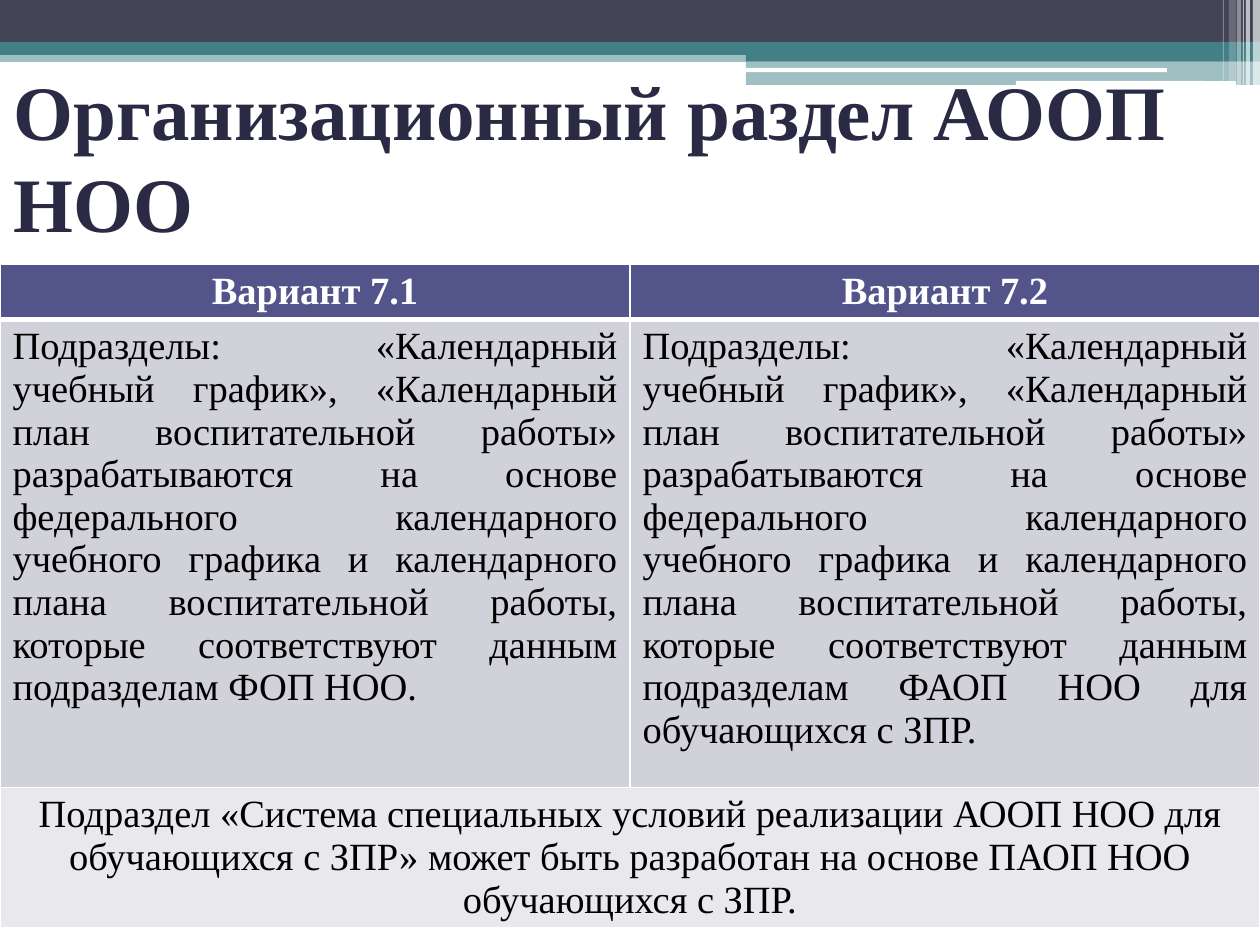
from lxml import etree
from pptx import Presentation
from pptx.dml.color import RGBColor
from pptx.enum.shapes import MSO_SHAPE
from pptx.enum.text import MSO_ANCHOR, MSO_AUTO_SIZE, PP_ALIGN
from pptx.oxml.ns import qn
from pptx.util import Pt

PX = 914400 // 126
WIDE, HIGH = 1260, 945
FONT = "Times New Roman"

SLATE = RGBColor(0x42, 0x44, 0x56)
TEAL = RGBColor(0x43, 0x80, 0x86)
WHITE = RGBColor(0xFF, 0xFF, 0xFF)
BLACK = RGBColor(0, 0, 0)
NAVY = RGBColor(0x2A, 0x2A, 0x45)
VIOLET = RGBColor(0x53, 0x54, 0x8A)
GREY = RGBColor(0xD1, 0xD1, 0xDA)
PALE = RGBColor(0xE9, 0xE9, 0xED)

RECT, ROUND = MSO_SHAPE.RECTANGLE, MSO_SHAPE.ROUNDED_RECTANGLE
LEFT, CENTER, JUST = PP_ALIGN.LEFT, PP_ALIGN.CENTER, PP_ALIGN.JUSTIFY
MIDDLE, NO_FIT = MSO_ANCHOR.MIDDLE, MSO_AUTO_SIZE.NONE

TITLE = "Организационный раздел АООП НОО"
HEADS = ["Вариант 7.1", "Вариант 7.2"]
BODY = (
    "Подразделы: «Календарный учебный график», «Календарный план "
    "воспитательной работы» разрабатываются на основе федерального "
    "календарного учебного графика и календарного плана воспитательной "
    "работы, которые соответствуют данным подразделам "
)
ENDS = ["ФОП НОО.", "ФАОП НОО для обучающихся с ЗПР."]
NOTE = (
    "Подраздел «Система специальных условий реализации АООП НОО для "
    "обучающихся с ЗПР» может быть разработан на основе ПАОП НОО "
    "обучающихся с ЗПР."
)

# left, top, width, height, colour, opacity in percent, shape
BARS = [
    (0, 50, 1260, 12, TEAL, 50, RECT),
    (0, 0, 1260, 43, SLATE, 100, RECT),
    (0, 42, 1260, 13, TEAL, 100, RECT),
    (746, 49, 514, 12, TEAL, 100, RECT),
    (746, 60, 514, 25, TEAL, 50, RECT),
    (745, 68, 422, 4, WHITE, 100, ROUND),
    (1016, 81, 220, 5, WHITE, 100, ROUND),
]
# left, width, height, opacity in percent
STRIPES = [
    (1253, 7, 85, 65),
    (1246, 4, 85, 65),
    (1243, 1, 85, 60),
    (1237, 4, 85, 40),
    (1229, 7, 81, 20),
    (1223, 1, 81, 30),
]


def place(box):
    return [n * PX for n in box]


def add_bar(slide, box, color, alpha, kind):
    bar = slide.shapes.add_shape(kind, *place(box))
    bar.shadow.inherit = False
    bar.fill.solid()
    bar.fill.fore_color.rgb = color
    bar.line.fill.background()
    if alpha < 100:
        tint = bar.fill._xPr.find(".//" + qn("a:srgbClr"))
        etree.SubElement(tint, qn("a:alpha"), val=str(alpha * 1000))


def add_band(slide, left, top):
    for x, y, w, h, color, alpha, kind in BARS:
        add_bar(slide, (left + x, top + y, w, h), color, alpha, kind)
    for x, w, h, alpha in STRIPES:
        add_bar(slide, (left + x, top, w, h), WHITE, alpha, RECT)


def style(para, size, color, bold, align):
    para.alignment = align
    font = para.font
    font.name, font.size, font.bold = FONT, Pt(size), bold
    font.color.rgb = color


def set_title(slide, box):
    title = slide.shapes.title
    title.left, title.top, title.width, title.height = place(box)
    frame = title.text_frame
    frame.text = TITLE
    frame.word_wrap = True
    frame.auto_size = NO_FIT
    frame.vertical_anchor = MIDDLE
    style(frame.paragraphs[0], 44, NAVY, True, LEFT)


def add_edges(cell, sides):
    props = cell._tc.get_or_add_tcPr()
    for i, (side, width) in enumerate(sides.items()):
        line = etree.Element(qn("a:ln" + side), w=str(Pt(width)))
        fill = etree.SubElement(line, qn("a:solidFill"))
        etree.SubElement(fill, qn("a:srgbClr"), val=str(WHITE))
        props.insert(i, line)


def add_grid(slide, box, heights):
    grid = slide.shapes.add_table(3, 2, *place(box)).table
    for col in grid.columns:
        col.width = box[2] * PX // 2
    for row, height in zip(grid.rows, heights):
        row.height = height * PX
    grid.cell(2, 0).merge(grid.cell(2, 1))

    # texts, fill, font colour, bold, alignment, top and bottom edges
    rows = [
        (HEADS, VIOLET, WHITE, True, CENTER, 1, 3),
        ([BODY + end for end in ENDS], GREY, BLACK, False, JUST, 3, 1),
        ([NOTE, ""], PALE, BLACK, False, CENTER, 1, 1),
    ]
    for r, (texts, fill, color, bold, align, top, base) in enumerate(rows):
        for c, text in enumerate(texts):
            cell = grid.cell(r, c)
            cell.fill.solid()
            cell.fill.fore_color.rgb = fill
            add_edges(cell, {"L": 1, "R": 1, "T": top, "B": base})
            if text:
                cell.text = text
                style(cell.text_frame.paragraphs[0], 22, color, bold, align)
    grid.cell(2, 0).text_frame.paragraphs[0].space_before = Pt(3)


def main():
    deck = Presentation()
    deck.slide_width, deck.slide_height = WIDE * PX, HIGH * PX
    slide = deck.slides.add_slide(deck.slide_layouts[5])
    add_band(slide, 0, 0)
    set_title(slide, (1, 76, 1181, 159))
    # Bring the title in front of the band
    tree = slide.shapes._spTree
    tree.append(slide.shapes.title._element)
    add_grid(slide, (0, 264, WIDE, 663), [54, 468, 141])
    deck.save("out.pptx")


if __name__ == "__main__":
    main()
